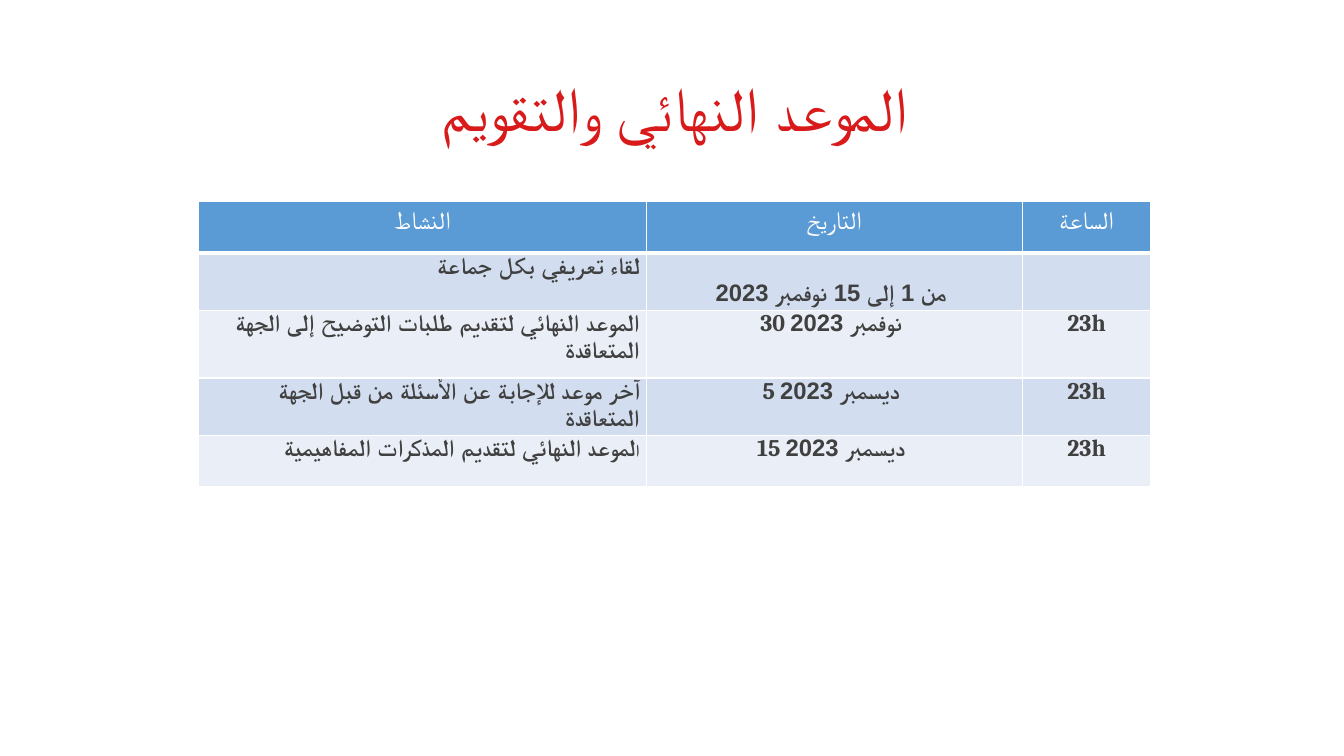
from dataclasses import dataclass

from lxml import etree
from pptx import Presentation
from pptx.dml.color import RGBColor
from pptx.enum.text import MSO_ANCHOR, PP_ALIGN
from pptx.oxml.ns import qn
from pptx.util import Pt

CENTER = PP_ALIGN.CENTER
RIGHT = PP_ALIGN.RIGHT
MIDDLE = MSO_ANCHOR.MIDDLE


@dataclass(frozen=True)
class Theme:
    title: str = "D81A1A"
    head: str = "5B9BD5"
    bands: tuple = ("D2DEEF", "EAEFF7")
    white: str = "FFFFFF"
    body: str = "404040"
    sans: str = "Calibri"
    serif: str = "Cambria"
    script: str = "Arial"
    title_size: int = 44
    head_size: int = 18
    body_size: int = 17
    small_size: int = 12


class Deck:
    def __init__(self, theme):
        self.theme = theme
        self.show = Presentation()
        self.show.slide_width = Pt(960)
        self.show.slide_height = Pt(540)
        self.slide = self.show.slides.add_slide(self.show.slide_layouts[6])

    def style(self, run, font, size, color, bold=False):
        run.font.name = font
        run.font.size = Pt(size)
        run.font.bold = bold
        run.font.color.rgb = RGBColor.from_string(color)
        props = run.font._element
        etree.SubElement(props, qn("a:cs"), typeface=self.theme.script)

    def title(self, text, left, top, width, height):
        box = self.slide.shapes.add_textbox(Pt(left), Pt(top), Pt(width), Pt(height))
        frame = box.text_frame
        frame.word_wrap = True
        frame.vertical_anchor = MIDDLE
        frame.text = text
        para = frame.paragraphs[0]
        para.alignment = CENTER
        para.line_spacing = 0.9
        self.style(para.runs[0], self.theme.sans, self.theme.title_size, self.theme.title)

    def border(self, cell, base):
        props = cell._tc.get_or_add_tcPr()
        for side, width in (("L", 1), ("R", 1), ("T", 1), ("B", base)):
            line = etree.SubElement(props, qn(f"a:ln{side}"), w=str(Pt(width)))
            fill = etree.SubElement(line, qn("a:solidFill"))
            etree.SubElement(fill, qn("a:srgbClr"), val=self.theme.white)

    def paint(self, cell, color, base=1):
        self.border(cell, base)
        cell.fill.solid()
        cell.fill.fore_color.rgb = RGBColor.from_string(color)

    def head(self, cell, text):
        self.paint(cell, self.theme.head, 3)
        cell.text_frame.text = text
        para = cell.text_frame.paragraphs[0]
        para.alignment = CENTER
        self.style(para.runs[0], self.theme.sans, self.theme.head_size, self.theme.white)

    def body(self, cell, text, align, color):
        self.paint(cell, color)
        if not text:
            return
        cell.margin_left = cell.margin_right = Pt(5)
        cell.margin_top = cell.margin_bottom = 0
        cell.text_frame.text = text
        para = cell.text_frame.paragraphs[0]
        para.alignment = align
        para.space_before = para.space_after = Pt(6)
        self.style(para.runs[0], self.theme.serif, self.theme.body_size, self.theme.body, True)

    def table(self, heads, rows, left, top, widths, heights):
        frame = self.slide.shapes.add_table(
            len(heights), len(widths), Pt(left), Pt(top), Pt(sum(widths)), Pt(sum(heights))
        )
        grid = frame.table
        for column, width in zip(grid.columns, widths):
            column.width = Pt(width)
        for row, height in zip(grid.rows, heights):
            row.height = Pt(height)
        for col, text in enumerate(heads):
            self.head(grid.cell(0, col), text)
        for row, texts in enumerate(rows, 1):
            color = self.theme.bands[(row - 1) % 2]
            for col, text in enumerate(texts):
                align = CENTER if col else RIGHT
                self.body(grid.cell(row, col), text, align, color)
        return grid

    def shrink(self, cell):
        para = cell.text_frame.paragraphs[0]
        first = para.runs[0]
        rest = para.add_run()
        rest.text = first.text[1:]
        first.text = first.text[:1]
        first.font.size = Pt(self.theme.small_size)
        self.style(rest, self.theme.serif, self.theme.body_size, self.theme.body, True)


def main():
    deck = Deck(Theme())
    deck.title("الموعد النهائي والتقويم", 142, 27.5, 680, 104.5)
    heads = ("النشاط", "التاريخ", "الساعة")
    rows = (
        ("لقاء تعريفي بكل جماعة", "من 1 إلى 15 نوفمبر 2023 ", ""),
        ("الموعد النهائي لتقديم طلبات التوضيح إلى الجهة المتعاقدة", "30 نوفمبر 2023 ", "23h"),
        ("آخر موعد للإجابة عن الأسئلة من قبل الجهة المتعاقدة", "5 ديسمبر 2023 ", "23h"),
        ("الموعد النهائي لتقديم المذكرات المفاهيمية", "15 ديسمبر 2023 ", "23h"),
    )
    widths = (319.8, 268.6, 91.6)
    heights = (36.8, 36.8, 48.4, 36.8, 36.8)
    grid = deck.table(heads, rows, 142, 144, widths, heights)
    period = grid.cell(1, 1).text_frame.paragraphs[0]
    period.line_spacing = 2.0
    period.space_before = Pt(12)
    deck.shrink(grid.cell(4, 0))
    deck.show.save("out.pptx")


if __name__ == "__main__":
    main()
